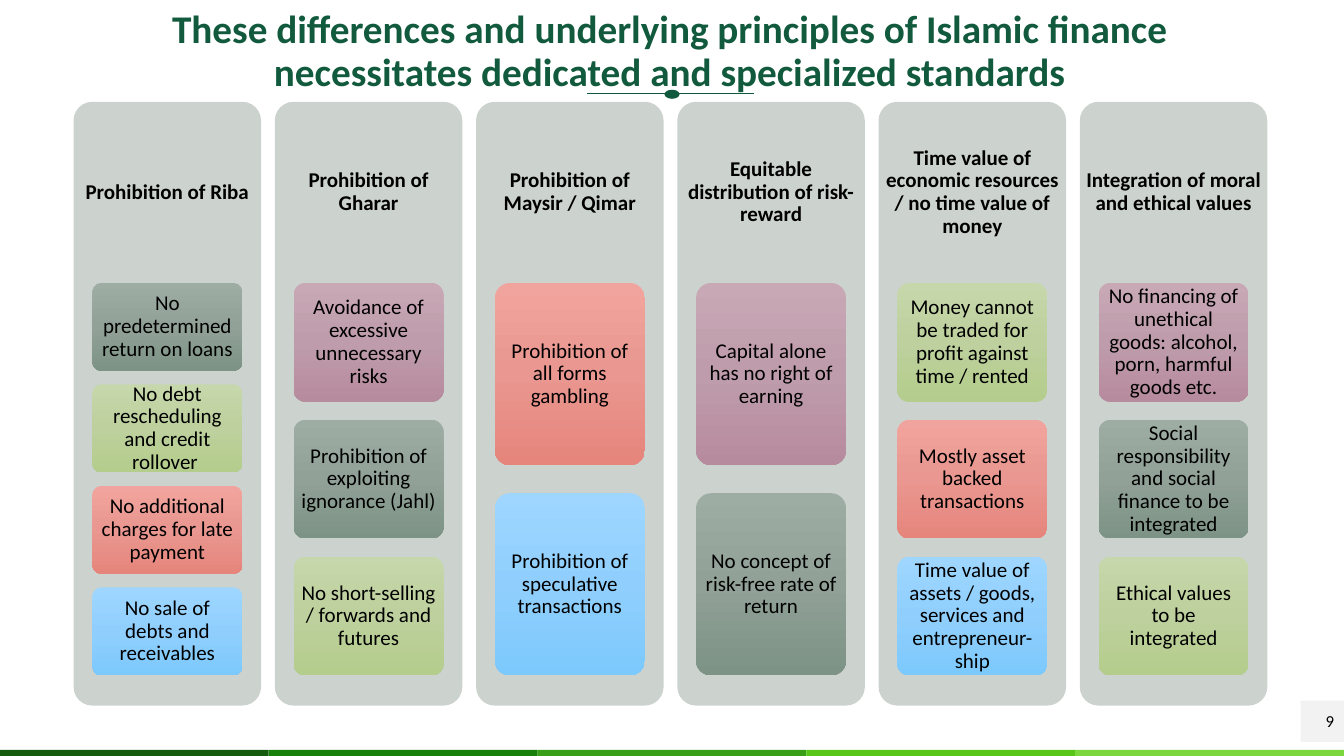
import copy

import pptx
import pptx.dml.color
import pptx.enum.shapes
import pptx.enum.text
import pptx.oxml.ns
import pptx.util

Inches = pptx.util.Inches
Kind = pptx.enum.shapes.MSO_SHAPE
Align = pptx.enum.text.PP_ALIGN

WIDTH, HEIGHT = 13.33, 7.5

# Grid of the principle columns, in inches
LEFT, TOP = 0.73, 1.01
COLUMN_STEP, PANEL_WIDTH, PANEL_HEIGHT = 1.996, 1.86, 5.99
HEADER_SHARE, CARDS_SHARE = 0.3, 0.65
CARD_WIDTH_SHARE = 0.8
GAP_SHARE = 0.154  # gap between cards, as a share of card height

COLORS = {
    "title": "125A3D", "text": "000000", "panel": "CCD2CE", "number": "F2F2F2",
}
STRIPES = ["155C0E", "16800A", "399F18", "58C619", "7CD73E"]
GRADIENTS = {
    "grey": ["9EADA4", "91A197", "7C9385"],
    "green": ["C6D7AB", "BDD09D", "B4CD8C"],
    "red": ["F1A49D", "E99790", "E6857C"],
    "blue": ["9ED6FF", "90CFFD", "7CC9FD"],
    "mauve": ["C9A8B6", "BE9CAB", "B78B9E"],
}

PRINCIPLES = [
    ("Prohibition of Riba", [
        ("grey", "No predetermined return on loans"),
        ("green", "No debt rescheduling and credit rollover "),
        ("red", "No additional charges for late payment"),
        ("blue", "No sale of debts and receivables")]),
    ("Prohibition of Gharar", [
        ("mauve", "Avoidance of excessive unnecessary risks"),
        ("grey", "Prohibition of exploiting ignorance (Jahl)"),
        ("green", "No short-selling / forwards and futures")]),
    ("Prohibition of Maysir / Qimar", [
        ("red", "Prohibition of all forms gambling"),
        ("blue", "Prohibition of speculative transactions")]),
    ("Equitable distribution of risk-reward", [
        ("mauve", "Capital alone has no right of earning"),
        ("grey", "No concept of risk-free rate of return")]),
    ("Time value of economic resources / no time value of money", [
        ("green", "Money cannot be traded for profit against time / rented"),
        ("red", "Mostly asset backed transactions"),
        ("blue", "Time value of assets / goods, services and entrepreneur-ship")]),
    ("Integration of moral and ethical values", [
        ("mauve", "No financing of unethical goods: alcohol, porn, harmful goods etc."),
        ("grey", "Social responsibility and social finance to be integrated"),
        ("green", "Ethical values to be integrated")]),
]


def rgb(value):
    return pptx.dml.color.RGBColor.from_string(value)


def apply_format(target, values):
    for name, value in values.items():
        setattr(target, name, value)


def write_text(box, text, size, color="text", bold=False, align=Align.CENTER,
               spacing=0.9, margins=(0.1, 0.05)):
    frame = box.text_frame
    side, end = map(Inches, margins)
    apply_format(frame, {
        "word_wrap": True, "vertical_anchor": pptx.enum.text.MSO_ANCHOR.MIDDLE,
        "margin_left": side, "margin_right": side,
        "margin_top": end, "margin_bottom": end,
    })
    para = frame.paragraphs[0]
    apply_format(para, {"alignment": align, "line_spacing": spacing})
    span = para.add_run()
    span.text = text
    apply_format(span.font, {
        "name": "Calibri", "size": pptx.util.Pt(size), "bold": bold})
    span.font.color.rgb = rgb(COLORS[color])


def add_label(page, area, text, size, **style):
    box = page.shapes.add_textbox(*map(Inches, area))
    write_text(box, text, size, **style)


def add_block(page, kind, area, fill=None):
    box = page.shapes.add_shape(kind, *map(Inches, area))
    box.shadow.inherit = False
    box.line.fill.background()
    if kind == Kind.ROUNDED_RECTANGLE:
        box.adjustments[0] = 0.1
    if fill:
        box.fill.solid()
        box.fill.fore_color.rgb = rgb(fill)
    return box


def fill_gradient(box, colors):
    box.fill.gradient()
    box.fill.gradient_angle = 270
    # A third stop goes between the two default ones
    stop_list = box._element.spPr.find(".//" + pptx.oxml.ns.qn("a:gsLst"))
    stop_list.insert(1, copy.deepcopy(stop_list[0]))
    for stop, position, color in zip(box.fill.gradient_stops, (0, 0.5, 1), colors):
        stop.color.rgb = rgb(color)
        stop.position = position


def add_principle(page, column, heading, cards):
    left = LEFT + column * COLUMN_STEP
    header_height = PANEL_HEIGHT * HEADER_SHARE
    add_block(page, Kind.ROUNDED_RECTANGLE,
              (left, TOP, PANEL_WIDTH, PANEL_HEIGHT), COLORS["panel"])
    add_label(page, (left, TOP, PANEL_WIDTH, header_height), heading, 15,
              bold=True, margins=(0.06, 0.06))

    # Cards share the space below the heading
    count = len(cards)
    card_width = PANEL_WIDTH * CARD_WIDTH_SHARE
    card_height = PANEL_HEIGHT * CARDS_SHARE / (count + GAP_SHARE * (count - 1))
    card_left = left + (PANEL_WIDTH - card_width) / 2
    for row, (color, text) in enumerate(cards):
        card_top = TOP + header_height + row * card_height * (1 + GAP_SHARE)
        card = add_block(page, Kind.ROUNDED_RECTANGLE,
                         (card_left, card_top, card_width, card_height))
        fill_gradient(card, GRADIENTS[color])
        write_text(card, text, 15, margins=(0.04, 0.03))


def add_footer(page):
    stripe_width = WIDTH / len(STRIPES)
    for index, color in enumerate(STRIPES):
        add_block(page, Kind.RECTANGLE,
                  (index * stripe_width, 7.44, stripe_width, HEIGHT - 7.44), color)
    number = add_block(page, Kind.RECTANGLE,
                       (12.9, 6.95, WIDTH - 12.9, 0.41), COLORS["number"])
    write_text(number, "9", 12, align=Align.RIGHT, spacing=1.0)


def add_title(page):
    # Ornament under the title
    ends = map(Inches, (5.82, 0.93, 7.48, 0.93))
    rule = page.shapes.add_connector(pptx.enum.shapes.MSO_CONNECTOR.STRAIGHT, *ends)
    rule.line.color.rgb = rgb(COLORS["title"])
    rule.line.width = pptx.util.Pt(0.75)
    rule._element.spPr.append(pptx.oxml.xmlchemy.OxmlElement("a:effectLst"))
    add_block(page, Kind.OVAL, (6.59, 0.89, 0.15, 0.09), COLORS["title"])
    add_label(page, (0.71, 0.26, 11.86, 0.52),
              "These differences and underlying principles of Islamic finance "
              "necessitates dedicated and specialized standards",
              28, color="title", bold=True)


def main():
    deck = pptx.Presentation()
    apply_format(deck, {"slide_width": Inches(WIDTH), "slide_height": Inches(HEIGHT)})
    page = deck.slides.add_slide(deck.slide_layouts[6])
    add_footer(page)
    add_title(page)
    for column, (heading, cards) in enumerate(PRINCIPLES):
        add_principle(page, column, heading, cards)
    deck.save("out.pptx")


if __name__ == "__main__":
    main()
